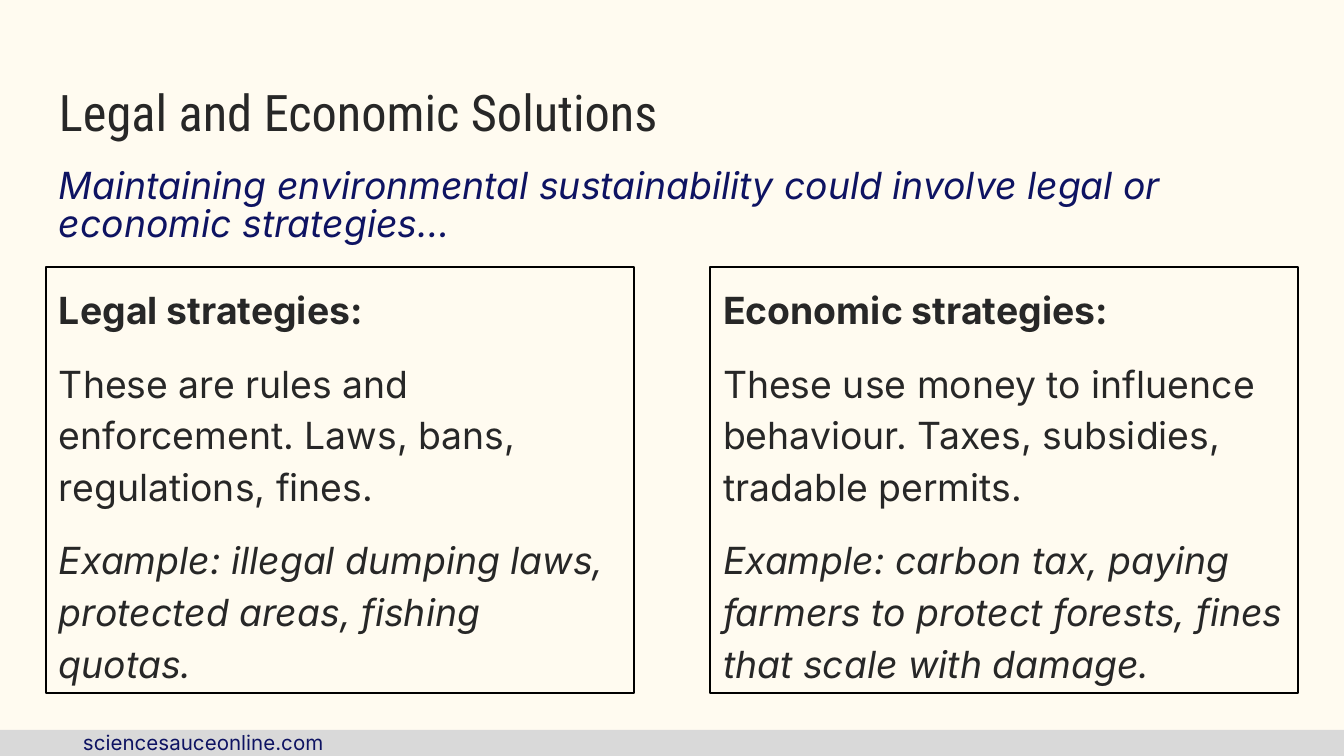
from pptx import Presentation
from pptx.dml.color import RGBColor
from pptx.enum.shapes import MSO_SHAPE
from pptx.enum.text import MSO_ANCHOR, MSO_AUTO_SIZE, PP_ALIGN
from pptx.oxml.ns import qn
from pptx.util import Emu, Pt

RECTANGLE = MSO_SHAPE.RECTANGLE
TOP, MIDDLE = MSO_ANCHOR.TOP, MSO_ANCHOR.MIDDLE
LEFT = PP_ALIGN.LEFT
NO_AUTOFIT = MSO_AUTO_SIZE.NONE

EMU_PER_PX = 914400 / 134.4
COMPARISON_LAYOUT = 4
UNUSED_PLACEHOLDER = 3
INSET = 13

CREAM, GREY, BLACK = "FFFBF0", "D9D9D9", "000000"
INK, NAVY = "272727", "0E1362"

TITLE = {"name": "Roboto Condensed", "size": Pt(27), "bold": False}
FOOTER = {"name": "Inter", "size": Pt(11)}
BODY = {"name": "Inter", "size": Pt(20), "bold": False}
HEADING = {**BODY, "bold": True}
EXAMPLE = {**BODY, "italic": True}

COLUMN_STYLES = (HEADING, BODY, EXAMPLE)
COLUMNS = {
    2: (46, (
        "Legal strategies:",
        "These are rules and enforcement. Laws, bans, regulations, fines.",
        "Example: illegal dumping laws, protected areas, fishing quotas.",
    )),
    4: (710, (
        "Economic strategies:",
        "These use money to influence behaviour. Taxes, subsidies, tradable permits.",
        "Example: carbon tax, paying farmers to protect forests, fines that scale with damage.",
    )),
}


def px(length):
    return Emu(round(length * EMU_PER_PX))


def color(hex_string):
    return RGBColor.from_string(hex_string)


def place(shape, left, top, width, height):
    shape.left, shape.top = px(left), px(top)
    shape.width, shape.height = px(width), px(height)


def prepare_frame(shape, anchor=TOP):
    """Set wrapping, anchor and equal insets, and return the text frame."""
    frame = shape.text_frame
    settings = {"word_wrap": True, "auto_size": NO_AUTOFIT, "vertical_anchor": anchor}
    for side in ("left", "top", "right", "bottom"):
        settings[f"margin_{side}"] = px(INSET)
    for name, value in settings.items():
        setattr(frame, name, value)
    return frame


def write_paragraph(paragraph, text, style, hex_color, line_spacing=1.0, space_before=0):
    """Fill one left-aligned paragraph without a bullet."""
    properties = paragraph._p.get_or_add_pPr()
    properties.set("marL", "0")
    properties.set("indent", "0")
    properties.append(properties.makeelement(qn("a:buNone"), {}))
    paragraph.alignment = LEFT
    paragraph.line_spacing = line_spacing
    paragraph.space_before = Pt(space_before)
    run = paragraph.add_run()
    run.text = text
    for name, value in style.items():
        setattr(run.font, name, value)
    run.font.color.rgb = color(hex_color)


def add_footer(slide):
    band = slide.shapes.add_shape(RECTANGLE, px(0), px(730), px(1344), px(28))
    band.shadow.inherit = False
    band.fill.solid()
    band.fill.fore_color.rgb = color(GREY)
    band.line.fill.background()
    box = slide.shapes.add_textbox(px(70), px(718), px(449), px(24))
    frame = prepare_frame(box)
    write_paragraph(frame.paragraphs[0], "sciencesauceonline.com", FOOTER, NAVY)


def fill_title(shape):
    place(shape, 46, 66, 1252, 90)
    frame = prepare_frame(shape, MIDDLE)
    write_paragraph(frame.paragraphs[0], "Legal and Economic Solutions", TITLE, INK)


def fill_introduction(shape):
    place(shape, 46, 156, 1252, 103)
    frame = prepare_frame(shape)
    text = "Maintaining environmental sustainability could involve legal or economic strategies…"
    write_paragraph(frame.paragraphs[0], text, EXAMPLE, NAVY, line_spacing=0.85)


def fill_column(shape, left, texts):
    place(shape, left, 267, 588, 426)
    shape.line.color.rgb = color(BLACK)
    shape.line.width = Pt(0.75)
    frame = prepare_frame(shape)
    for index, (text, style) in enumerate(zip(texts, COLUMN_STYLES)):
        paragraph = frame.add_paragraph() if index else frame.paragraphs[0]
        write_paragraph(paragraph, text, style, INK, 1.15, 12 if index else 0)


def main():
    presentation = Presentation()
    presentation.slide_width, presentation.slide_height = px(1344), px(756)
    slide = presentation.slides.add_slide(presentation.slide_layouts[COMPARISON_LAYOUT])
    slide.background.fill.solid()
    slide.background.fill.fore_color.rgb = color(CREAM)

    placeholders = {shape.placeholder_format.idx: shape for shape in slide.placeholders}
    unused = placeholders[UNUSED_PLACEHOLDER].element
    unused.getparent().remove(unused)

    add_footer(slide)
    fill_title(slide.shapes.title)
    fill_introduction(placeholders[1])
    for index, (left, texts) in COLUMNS.items():
        fill_column(placeholders[index], left, texts)
    presentation.save("out.pptx")


if __name__ == "__main__":
    main()
